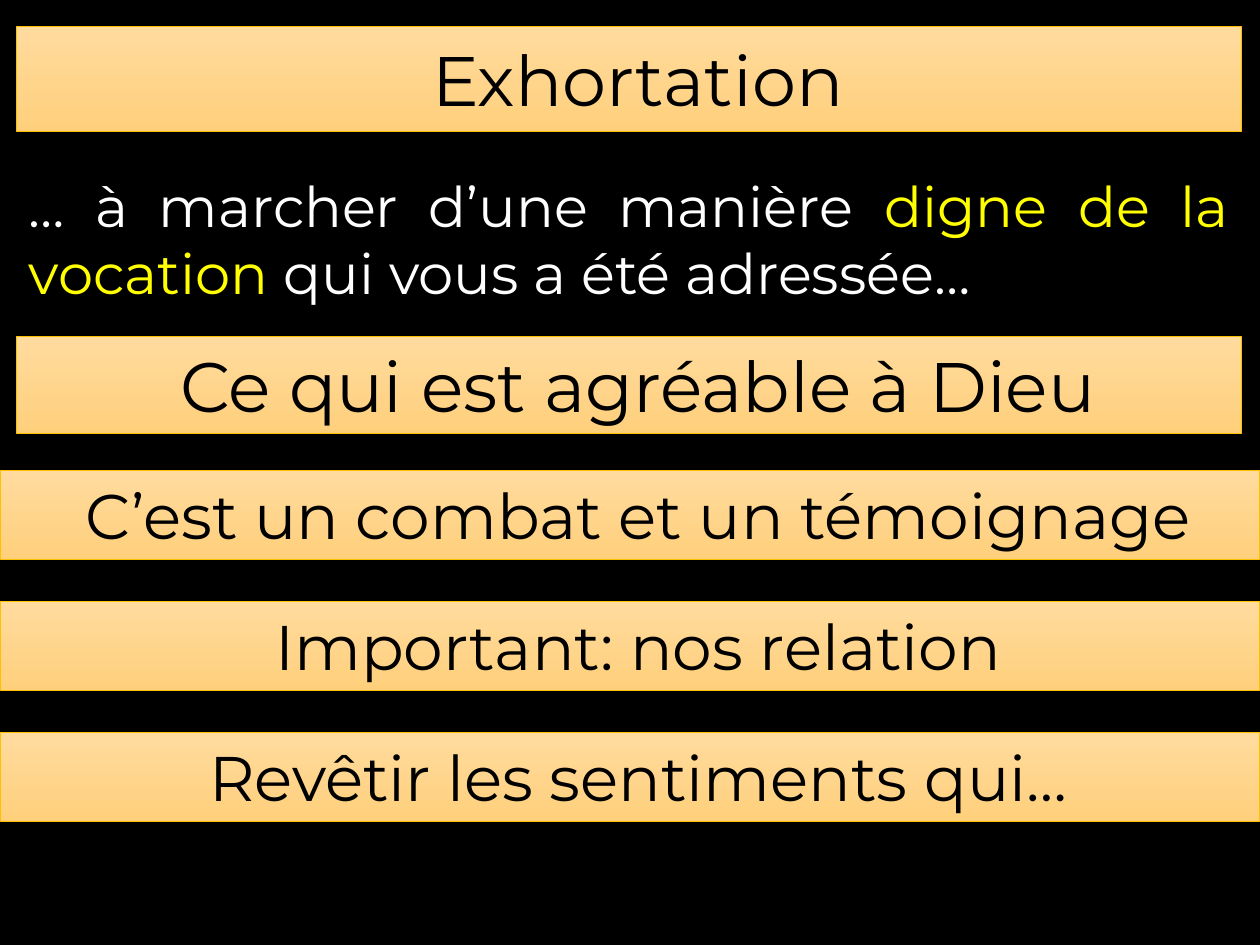
import dataclasses
import typing

import pptx
import pptx.dml.color
import pptx.enum.shapes
import pptx.enum.text
import pptx.util

WIDTH, HEIGHT = pptx.util.Inches(10), pptx.util.Inches(7.5)
MARGIN = pptx.util.Inches(0.13)
INNER_WIDTH = pptx.util.Inches(9.72)
FONT = "Montserrat"
BLACK, WHITE, YELLOW = "000000", "FFFFFF", "FFFF00"
BAND_TOP, BAND_BOTTOM, BAND_EDGE = "FFDB9E", "FFD07C", "FFC000"


@dataclasses.dataclass(frozen=True)
class Band:
    text: str
    top: float
    height: float = 0.71
    size: int = 36
    inset: bool = False


POINTS_TOP, POINTS_STEP = 3.73, 1.04
POINTS = [
    " C’est un combat et un témoignage",
    " Important: nos relation",
    " Revêtir les sentiments qui…",
]
TITLE = Band(" Exhortation", 0.24, 0.77, 40, True)
BANDS = [Band(" Ce qui est agréable à Dieu", 2.67, 0.77, 40, True)] + [
    Band(point, POINTS_TOP + row * POINTS_STEP) for row, point in enumerate(POINTS)
]
VERSE = [
    ("… à marcher d’une manière ", WHITE),
    ("digne de la vocation", YELLOW),
    (" qui vous a été adressée…", WHITE),
]


def rgb(value: str) -> pptx.dml.color.RGBColor:
    return pptx.dml.color.RGBColor.from_string(value)


def format_run(run: typing.Any, size: int, color: str) -> None:
    run.font.name = FONT
    run.font.size = pptx.util.Pt(size)
    run.font.color.rgb = rgb(color)


def format_band(shape: typing.Any, band: Band) -> None:
    shape.left = MARGIN if band.inset else 0
    shape.top = pptx.util.Inches(band.top)
    shape.width = INNER_WIDTH if band.inset else WIDTH
    shape.height = pptx.util.Inches(band.height)
    shape.fill.gradient()
    shape.fill.gradient_angle = 270
    for stop, color in zip(shape.fill.gradient_stops, (BAND_TOP, BAND_BOTTOM)):
        stop.color.rgb = rgb(color)
    shape.line.color.rgb = rgb(BAND_EDGE)
    shape.line.width = pptx.util.Pt(0.5)
    shape.shadow.inherit = False

    frame = shape.text_frame
    frame.text = band.text
    frame.word_wrap = True
    frame.auto_size = pptx.enum.text.MSO_AUTO_SIZE.SHAPE_TO_FIT_TEXT
    frame.vertical_anchor = pptx.enum.text.MSO_ANCHOR.MIDDLE
    paragraph = frame.paragraphs[0]
    paragraph.alignment = pptx.enum.text.PP_ALIGN.CENTER
    format_run(paragraph.runs[0], band.size, BLACK)


def add_verse(slide: typing.Any) -> None:
    verse = slide.shapes.add_textbox(
        MARGIN, pptx.util.Inches(1.31), INNER_WIDTH, pptx.util.Inches(1.18)
    )
    frame = verse.text_frame
    frame.word_wrap = True
    frame.auto_size = pptx.enum.text.MSO_AUTO_SIZE.SHAPE_TO_FIT_TEXT
    paragraph = frame.paragraphs[0]
    paragraph.alignment = pptx.enum.text.PP_ALIGN.JUSTIFY
    for words, color in VERSE:
        run = paragraph.add_run()
        run.text = words
        format_run(run, 32, color)


def main() -> None:
    deck = pptx.Presentation()
    deck.slide_width, deck.slide_height = WIDTH, HEIGHT
    slide = deck.slides.add_slide(deck.slide_layouts.get_by_name("Title Only"))
    slide.background.fill.solid()
    slide.background.fill.fore_color.rgb = rgb(BLACK)

    format_band(slide.shapes.title, TITLE)
    add_verse(slide)
    for band in BANDS:
        rectangle = slide.shapes.add_shape(
            pptx.enum.shapes.MSO_SHAPE.RECTANGLE, 0, 0, WIDTH, HEIGHT
        )
        format_band(rectangle, band)
    deck.save("out.pptx")


if __name__ == "__main__":
    main()
